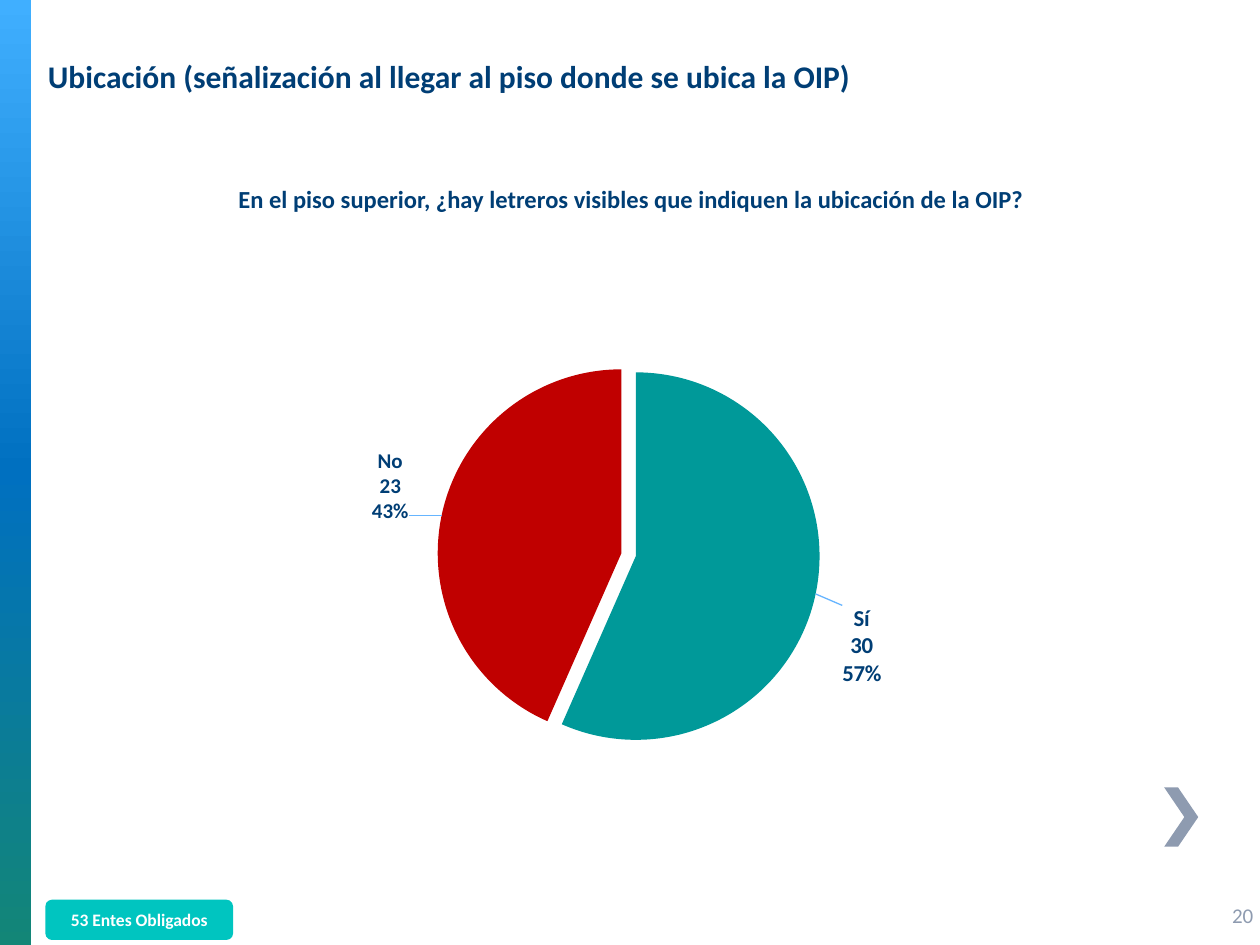
import copy

import lxml.etree
import pptx
import pptx.chart.data
import pptx.dml.color
import pptx.enum.chart
import pptx.enum.shapes
import pptx.enum.text
import pptx.oxml.ns
import pptx.util

RGBColor = pptx.dml.color.RGBColor
Align = pptx.enum.text.PP_ALIGN
Shape = pptx.enum.shapes.MSO_SHAPE
qn = pptx.oxml.ns.qn

NAVY = RGBColor(0x00, 0x3E, 0x75)
GREY = RGBColor(0x8E, 0x9B, 0xB0)
TURQUOISE = RGBColor(0x00, 0xC5, 0xC0)
WHITE = RGBColor(0xFF, 0xFF, 0xFF)
TEAL = RGBColor(0x00, 0x99, 0x99)
RED = RGBColor(0xC0, 0x00, 0x00)
LEADER = RGBColor(0x66, 0xB5, 0xFF)
BAR_STOPS = [
    (0, RGBColor(0x40, 0xAF, 0xFF)),
    (0.5, RGBColor(0x00, 0x70, 0xC0)),
    (1, RGBColor(0x13, 0x86, 0x77)),
]
FONT = "Calibri"
CELL = 0.25  # the slide is a grid of 40 columns by 30 rows
COLUMNS, ROWS = 40, 30

# category, value, slice colour, label size, label shift as shares of the chart
ANSWERS = [
    ("Sí", 30, TEAL, 13, (0.03, 0.02)),
    ("No", 23, RED, 12, (-0.04, 0.02)),
]


def grid(*cells):
    return [pptx.util.Inches(cell * CELL) for cell in cells]


def style_font(font, size, color, bold=True):
    font.name = FONT
    font.size = pptx.util.Pt(size)
    font.bold = bold
    font.color.rgb = color


def write(box, text, size, color, align=Align.LEFT, bold=True,
          anchor=pptx.enum.text.MSO_ANCHOR.MIDDLE):
    frame = box.text_frame
    frame.text = text
    frame.word_wrap = True
    frame.vertical_anchor = anchor
    para = frame.paragraphs[0]
    para.alignment = align
    style_font(para.runs[0].font, size, color, bold)


def add_text(page, place, text, size, color, **options):
    write(page.shapes.add_textbox(*grid(*place)), text, size, color, **options)


def add_plain_shape(page, kind, place):
    shape = page.shapes.add_shape(kind, *grid(*place))
    shape.shadow.inherit = False
    shape.line.fill.background()
    return shape


def add_side_bar(page):
    bar = add_plain_shape(page, Shape.RECTANGLE, (0, 0, 1, ROWS))
    bar.fill.gradient()
    bar.fill.gradient_angle = 270
    first = next(bar.element.iter(qn("a:gs")))
    first.addnext(copy.deepcopy(first))
    for stop, (position, color) in zip(bar.fill.gradient_stops, BAR_STOPS):
        stop.position = position
        stop.color.rgb = color


def add_chevron(page, left, top, width, height, thickness):
    middle, right = top + height / 2, left + width
    outline = [
        (left, top), (left + thickness, top), (right, middle),
        (left + thickness, top + height), (left, top + height),
        (right - thickness, middle),
    ]
    points = [grid(*point) for point in outline]
    builder = page.shapes.build_freeform(*points[0])
    builder.add_line_segments(points[1:], close=True)
    chevron = builder.convert_to_shape()
    chevron.shadow.inherit = False
    chevron.fill.solid()
    chevron.fill.fore_color.rgb = GREY
    chevron.line.fill.background()


def split_lines(labels):
    """Put each part of a chart label on its own line."""
    separator = lxml.etree.Element(qn("c:separator"))
    separator.text = "\n"
    labels.find(qn("c:showBubbleSize")).addnext(separator)


def format_point_label(point, size, shift):
    label = point.data_label
    style_font(label.font, size, NAVY)
    label.position = pptx.enum.chart.XL_LABEL_POSITION.OUTSIDE_END
    element = label.font._element.getparent().getparent().getparent().getparent()
    for part in ("showVal", "showCatName", "showPercent"):
        element.find(qn("c:" + part)).set("val", "1")
    split_lines(element)
    add_layout(element.find(qn("c:idx")).addnext, x=shift[0], y=shift[1])


def add_layout(insert, **settings):
    layout = lxml.etree.Element(qn("c:layout"))
    manual = lxml.etree.SubElement(layout, qn("c:manualLayout"))
    for name, value in settings.items():
        lxml.etree.SubElement(manual, qn("c:" + name), val=str(value))
    insert(layout)


def add_leader_lines(labels):
    shown = labels.find(qn("c:showLeaderLines"))
    if shown is None:
        shown = lxml.etree.SubElement(labels, qn("c:showLeaderLines"))
    shown.set("val", "1")
    lines = lxml.etree.Element(qn("c:leaderLines"))
    properties = lxml.etree.SubElement(lines, qn("c:spPr"))
    line = lxml.etree.SubElement(properties, qn("a:ln"), w="9525")
    fill = lxml.etree.SubElement(line, qn("a:solidFill"))
    lxml.etree.SubElement(fill, qn("a:srgbClr"), val=str(LEADER))
    shown.addnext(lines)


def add_answer_pie(page, place):
    data = pptx.chart.data.CategoryChartData()
    data.categories = [answer[0] for answer in ANSWERS]
    data.add_series("Series 1", [answer[1] for answer in ANSWERS])
    chart = page.shapes.add_chart(
        pptx.enum.chart.XL_CHART_TYPE.PIE, *grid(*place), data).chart
    chart.has_legend = False
    chart.has_title = False
    style_font(chart.font, 10, NAVY)
    plot = chart.plots[0]
    plot.vary_by_categories = True

    area = next(chart.element.iter(qn("c:plotArea")))
    for old in area.findall(qn("c:layout")):
        area.remove(old)
    add_layout(lambda layout: area.insert(0, layout), layoutTarget="inner",
               xMode="edge", yMode="edge", x=0.11, y=0.08, w=0.78, h=0.77)

    series = plot.series[0]
    labels = series.data_labels
    style_font(labels.font, 12, NAVY)
    labels.position = pptx.enum.chart.XL_LABEL_POSITION.OUTSIDE_END
    labels.show_value = labels.show_category_name = labels.show_percentage = True
    all_labels = next(chart.element.iter(qn("c:dLbls")))
    split_lines(all_labels)
    add_leader_lines(all_labels)
    for index, (_, _, color, size, shift) in enumerate(ANSWERS):
        point = series.points[index]
        point.format.fill.solid()
        point.format.fill.fore_color.rgb = color
        format_point_label(point, size, shift)

    explosion = lxml.etree.Element(qn("c:explosion"), val="4")
    next(chart.element.iter(qn("c:dPt"))).addprevious(explosion)
    for slice_element in chart.element.iter(qn("c:dPt")):
        slice_element.find(qn("c:spPr")).addprevious(copy.deepcopy(explosion))


def add_title(page, place, text):
    title = page.shapes.title
    title.left, title.top, title.width, title.height = grid(*place)
    write(title, text, 18, NAVY)


def main():
    deck = pptx.Presentation()
    deck.slide_width, deck.slide_height = grid(COLUMNS, ROWS)
    page = deck.slides.add_slide(deck.slide_layouts[5])
    add_side_bar(page)
    add_chevron(page, 36.96, 25, 1.08, 1.88, 0.44)
    add_text(page, (38.72, 28.24, 1.68, 1.6), "20", 12, GREY, bold=False)
    add_title(page, (1.12, 0.52, 37.16, 3.76),
              "Ubicación (señalización al llegar al piso donde se ubica la OIP)")
    add_text(page, (6.48, 5.64, 27.12, 1.36),
             "En el piso superior, ¿hay letreros visibles que indiquen "
             "la ubicación de la OIP?", 14, NAVY, align=Align.CENTER,
             anchor=pptx.enum.text.MSO_ANCHOR.TOP)
    badge = add_plain_shape(page, Shape.ROUNDED_RECTANGLE,
                            (1.44, 28.56, 5.96, 1.28))
    badge.fill.solid()
    badge.fill.fore_color.rgb = TURQUOISE
    write(badge, "53 Entes Obligados", 10, WHITE, align=Align.CENTER)
    add_answer_pie(page, (9.72, 10.28, 20.48, 15.76))
    deck.save("out.pptx")


if __name__ == "__main__":
    main()
